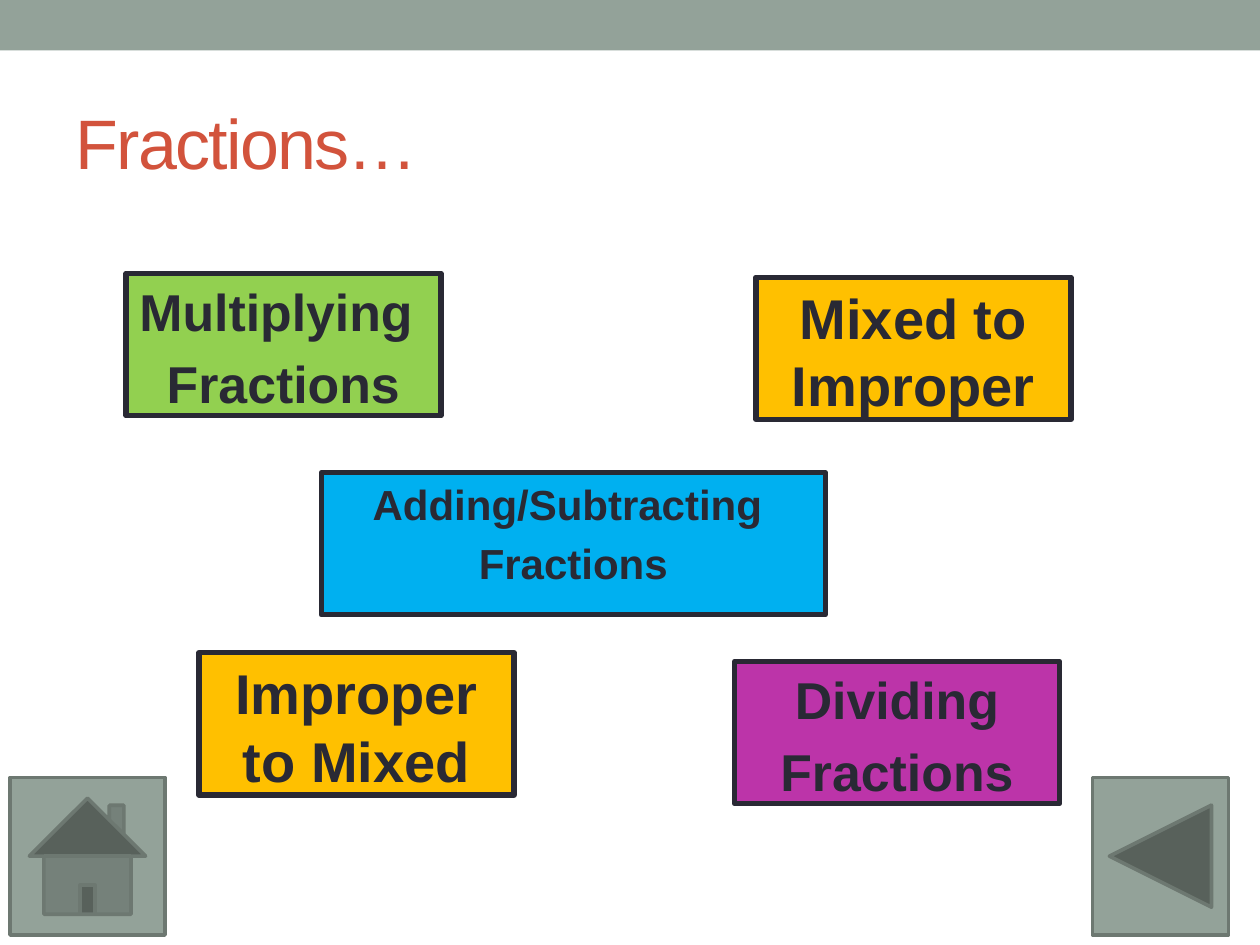
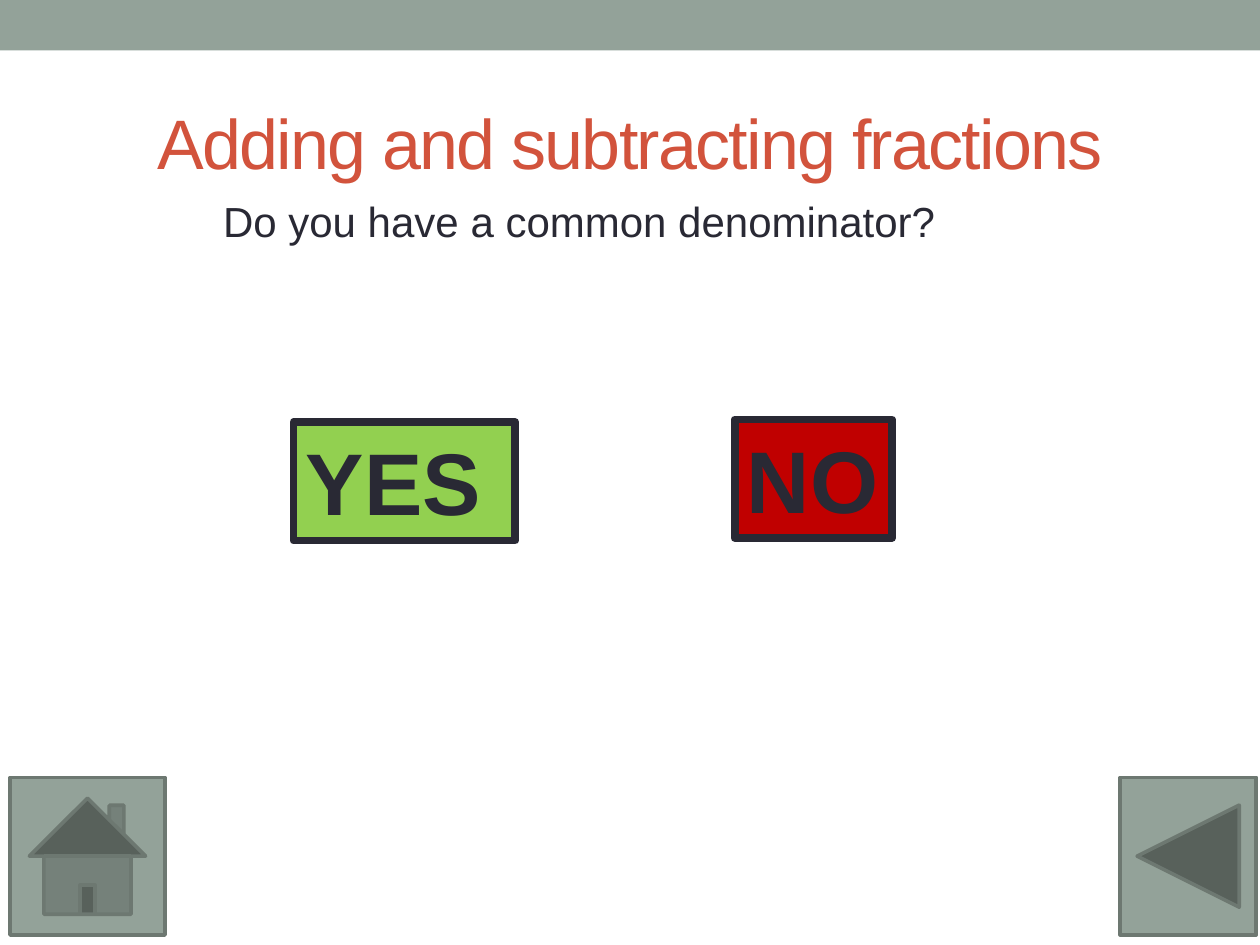
from pptx import Presentation
from pptx.dml.color import RGBColor
from pptx.enum.shapes import MSO_SHAPE as Shape
from pptx.enum.text import MSO_ANCHOR as Anchor, MSO_AUTO_SIZE as AutoSize, PP_ALIGN as Align
from pptx.util import Inches, Pt
from lxml import etree

COLORS = {
    "sage": "93A299", "sage_dark": "6D7871", "title": "D2533C", "ink": "292934",
    "gold": "FFC000", "blue": "00B0F0", "green": "92D050", "purple": "BC34A9",
    "red": "C00000",
}
FONT = "Arial"
DRAWING = "{http://schemas.openxmlformats.org/drawingml/2006/main}"
BUTTON_TOP, BUTTON_HEIGHT = 6.17, 1.25


def color(name):
    return RGBColor.from_string(COLORS[name])


def place(shape, left, top, width, height):
    shape.left, shape.top = Inches(left), Inches(top)
    shape.width, shape.height = Inches(width), Inches(height)


def paint(shape, fill, line=None, line_width=3):
    shape.fill.solid()
    shape.fill.fore_color.rgb = color(fill)
    if line:
        shape.line.color.rgb = color(line)
        shape.line.width = Pt(line_width)
    else:
        shape.line.fill.background()


def write(shape, text, size, ink="ink", bold=False, align=Align.LEFT,
          anchor=Anchor.TOP, space_before=0.0, spacing=None):
    """Write one paragraph per line; space_before is a share of the text size."""
    frame = shape.text_frame
    frame.word_wrap = True
    frame.auto_size = AutoSize.NONE
    frame.vertical_anchor = anchor
    frame.text = text
    for paragraph in frame.paragraphs:
        paragraph.alignment = align
        paragraph.space_before = Pt(round(size * space_before, 1))
        properties = paragraph._p.get_or_add_pPr()
        properties.set("marL", "0")
        properties.set("indent", "0")
        etree.SubElement(properties, DRAWING + "buNone")
        for run in paragraph.runs:
            font = run.font
            font.name, font.size, font.bold = FONT, Pt(size), bold
            font.color.rgb = color(ink)
            if spacing is not None:
                run._r.get_or_add_rPr().set("spc", str(spacing * 100))


def add_shape(slide, kind, left, top, width, height, fill, line=None, line_width=3):
    shape = slide.shapes.add_shape(
        kind, Inches(left), Inches(top), Inches(width), Inches(height))
    shape.shadow.inherit = False
    paint(shape, fill, line, line_width)
    return shape


def add_topic(slide, text, left, top, fill, size, width=2.5):
    box = add_shape(slide, Shape.RECTANGLE, left, top, width, 1.13, fill, "ink")
    write(box, text, size, bold=True, align=Align.CENTER, space_before=0.2)


def add_answer(slide, text, left, top, width, fill):
    box = add_shape(slide, Shape.RECTANGLE, left, top, width, 0.94, fill, "ink", 4.5)
    write(box, text, 50, bold=True)


def add_base_slide(presentation, title, back_left, title_align=Align.LEFT):
    """Add a slide with the top band, the title and both navigation buttons."""
    slide = presentation.slides.add_slide(presentation.slide_layouts[1])
    add_shape(slide, Shape.RECTANGLE, 0, 0, 10, 0.4, "sage")
    place(slide.shapes.title, 0.5, 0.58, 9, 1.08)
    write(slide.shapes.title, title, 40, "title", align=title_align,
          anchor=Anchor.MIDDLE, spacing=-1)
    for kind, left, width in (
        (Shape.ACTION_BUTTON_HOME, 0.08, 1.23),
        (Shape.ACTION_BUTTON_BACK_OR_PREVIOUS, back_left, 1.08),
    ):
        add_shape(slide, kind, left, BUTTON_TOP, width, BUTTON_HEIGHT,
                  "sage", "sage_dark", 2.08)
    return slide


def add_menu_slide(presentation):
    slide = add_base_slide(presentation, "Fractions…", 8.67)
    # Central topic
    body = slide.placeholders[1]
    place(body, 2.55, 3.75, 4, 1.13)
    paint(body, "blue", "ink")
    write(body, "Adding/Subtracting \nFractions", 24, bold=True,
          align=Align.CENTER, space_before=0.2)
    # Surrounding topics
    add_topic(slide, "Multiplying \nFractions", 1, 2.17, "green", 29.6)
    add_topic(slide, "Mixed to Improper", 6, 2.2, "gold", 32)
    add_topic(slide, "Improper to Mixed", 1.58, 5.18, "gold", 32)
    add_topic(slide, "Dividing\nFractions", 5.83, 5.25, "purple", 29.6, width=2.58)


def add_question_slide(presentation):
    slide = add_base_slide(presentation, "Adding and subtracting fractions", 8.89,
                           Align.CENTER)
    # Question
    body = slide.placeholders[1]
    place(body, 1.67, 1.5, 7.25, 0.63)
    write(body, "Do you have a common denominator?", 24, space_before=0.2)
    # Answers
    add_answer(slide, "YES", 2.33, 3.35, 1.76, "green")
    add_answer(slide, "NO", 5.83, 3.33, 1.25, "red")


def main():
    presentation = Presentation()
    presentation.slide_width, presentation.slide_height = Inches(10), Inches(7.5)
    add_menu_slide(presentation)
    add_question_slide(presentation)
    presentation.save("out.pptx")


if __name__ == "__main__":
    main()
